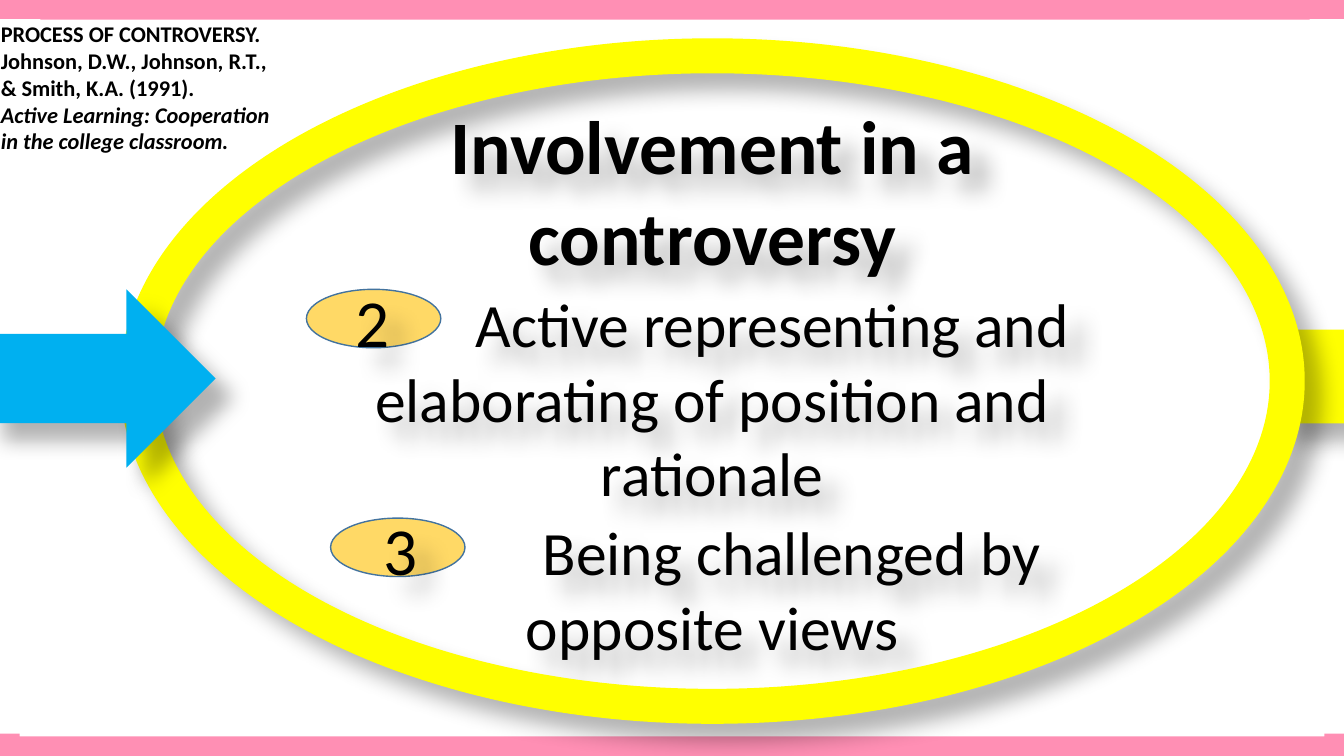
from dataclasses import dataclass

from lxml import etree
from pptx import Presentation
from pptx.dml.color import RGBColor
from pptx.enum.shapes import MSO_SHAPE
from pptx.enum.text import MSO_ANCHOR, MSO_AUTO_SIZE, PP_ALIGN
from pptx.oxml.ns import qn
from pptx.util import Inches, Pt

FRAME = MSO_SHAPE.FRAME
RECTANGLE = MSO_SHAPE.RECTANGLE
ELLIPSE = MSO_SHAPE.OVAL
DONUT = MSO_SHAPE.DONUT
RIGHT_ARROW = MSO_SHAPE.RIGHT_ARROW
MIDDLE = MSO_ANCHOR.MIDDLE
TOP = MSO_ANCHOR.TOP
CENTER = PP_ALIGN.CENTER
LEFT = PP_ALIGN.LEFT
GROW = MSO_AUTO_SIZE.SHAPE_TO_FIT_TEXT

SLIDE_WIDTH = Inches(13.33)
SLIDE_HEIGHT = Inches(7.5)
FONT = "Calibri"
PINK, WHITE, YELLOW = "FF8FB4", "FFFFFF", "FFFF00"
GOLD, BLUE, SKY, BLACK = "FFD966", "43739E", "00B0F0", "000000"


@dataclass(frozen=True)
class Box:
    left: float
    top: float
    width: float
    height: float

    def emu(self) -> tuple[int, int, int, int]:
        return (
            int(SLIDE_WIDTH * self.left / 100),
            int(SLIDE_HEIGHT * self.top / 100),
            int(SLIDE_WIDTH * self.width / 100),
            int(SLIDE_HEIGHT * self.height / 100),
        )


@dataclass(frozen=True)
class Figure:
    kind: MSO_SHAPE
    box: Box
    fill: str
    line: str | None = None
    adjustment: float | None = None
    shadow: bool = False


@dataclass(frozen=True)
class Run:
    text: str
    size: float
    bold: bool = False
    italic: bool = False
    spacing: float = 0


RING = Figure(DONUT, Box(8.93, 5.07, 88.15, 90.67), YELLOW, adjustment=0.051, shadow=True)
ARROW = Figure(RIGHT_ARROW, Box(-1.13, 38.27, 17.18, 23.6), SKY, shadow=True)
BACKDROP = [
    Figure(FRAME, Box(0, 0, 100, 100), PINK, adjustment=0.026),
    *[Figure(RECTANGLE, Box(left, 2.53, 3.68, 94.53), WHITE) for left in (-0.68, 97.45)],
    Figure(RECTANGLE, Box(95.05, 43.6, 5.85, 12.4), YELLOW, shadow=True),
    *[
        Figure(ELLIPSE, Box(left, top, 10, 7.73), GOLD, line=BLUE)
        for left, top in ((22.8, 38.27), (24.6, 68.53))
    ],
]
CITATION_BOX = Box(-0.68, 2, 21.6, 22.93)


def step(number: str, gap: float, text: str) -> list[Run]:
    return [Run(number, 48), Run(" ", 44, spacing=gap), Run(text, 44)]


STEPS = [
    [Run("Involvement in a controversy", 54, bold=True)],
    step("2", 51.5, "Active representing and elaborating of position and rationale"),
    step("3", 79.5, "Being challenged by opposite views"),
]
CITATION = [
    [Run("PROCESS OF CONTROVERSY. Johnson, D.W., Johnson, R.T., & Smith, K.A. (1991).", 16, bold=True)],
    [Run("Active Learning: Cooperation in the college classroom.", 16, bold=True, italic=True)],
]


def color(value: str) -> RGBColor:
    return RGBColor.from_string(value)


def add_shadow(shape) -> None:
    effects = shape._element.spPr.find(qn("a:effectLst"))
    outer = etree.SubElement(
        effects,
        qn("a:outerShdw"),
        blurRad=str(Pt(15)),
        dist=str(Pt(18)),
        dir=str(45 * 60000),
        algn="tl",
        rotWithShape="0",
    )
    shade = etree.SubElement(outer, qn("a:srgbClr"), val=BLACK)
    etree.SubElement(shade, qn("a:alpha"), val="30000")


def add_figure(slide, figure: Figure):
    shape = slide.shapes.add_shape(figure.kind, *figure.box.emu())
    shape.fill.solid()
    shape.fill.fore_color.rgb = color(figure.fill)
    if figure.line:
        shape.line.color.rgb = color(figure.line)
        shape.line.width = Pt(1)
    else:
        shape.line.fill.background()
    if figure.adjustment is not None:
        shape.adjustments[0] = figure.adjustment
    shape.shadow.inherit = False
    if figure.shadow:
        add_shadow(shape)
    return shape


def write(shape, paragraphs: list[list[Run]], alignment: PP_ALIGN, anchor: MSO_ANCHOR) -> None:
    frame = shape.text_frame
    frame.word_wrap = True
    frame.vertical_anchor = anchor
    for index, runs in enumerate(paragraphs):
        paragraph = frame.add_paragraph() if index else frame.paragraphs[0]
        paragraph.alignment = alignment
        for item in runs:
            run = paragraph.add_run()
            run.text = item.text
            run.font.name = FONT
            run.font.size = Pt(item.size)
            run.font.bold = item.bold
            run.font.italic = item.italic
            run.font.color.rgb = color(BLACK)
            if item.spacing:
                run.font._element.set("spc", str(int(item.spacing * 100)))


def main() -> None:
    presentation = Presentation()
    presentation.slide_width = SLIDE_WIDTH
    presentation.slide_height = SLIDE_HEIGHT
    slide = presentation.slides.add_slide(presentation.slide_layouts[6])
    for figure in BACKDROP:
        add_figure(slide, figure)
    write(add_figure(slide, RING), STEPS, CENTER, MIDDLE)
    add_figure(slide, ARROW)
    citation = slide.shapes.add_textbox(*CITATION_BOX.emu())
    write(citation, CITATION, LEFT, TOP)
    citation.text_frame.auto_size = GROW
    presentation.save("out.pptx")


if __name__ == "__main__":
    main()
